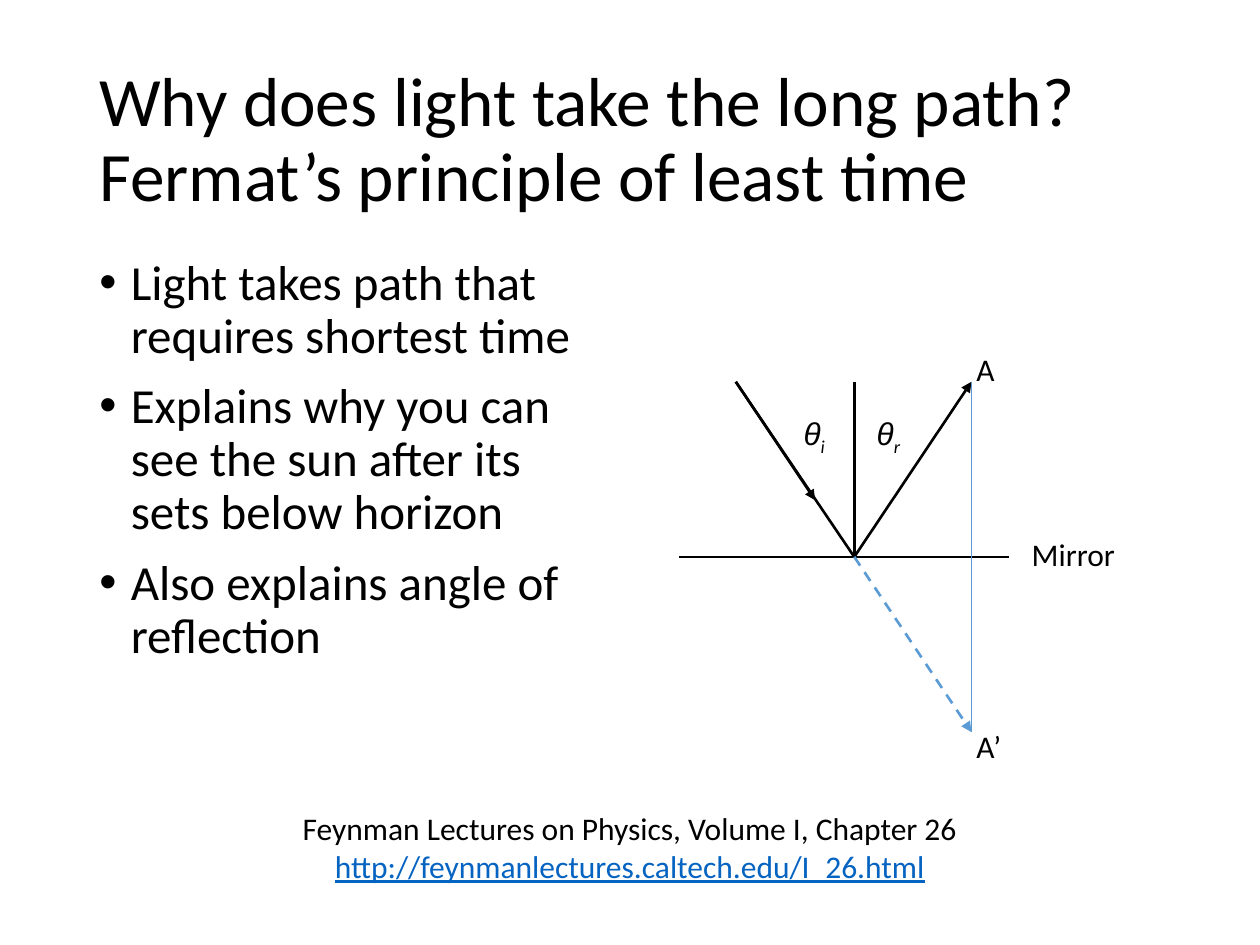
from dataclasses import dataclass
from typing import Optional

from lxml import etree
from pptx import Presentation
from pptx.dml.color import RGBColor
from pptx.enum.dml import MSO_LINE
from pptx.enum.shapes import MSO_CONNECTOR
from pptx.enum.text import MSO_ANCHOR, PP_ALIGN
from pptx.oxml.ns import qn
from pptx.util import Inches, Pt

STRAIGHT = MSO_CONNECTOR.STRAIGHT
DASH = MSO_LINE.DASH
MIDDLE = MSO_ANCHOR.MIDDLE
TOP = MSO_ANCHOR.TOP
CENTER = PP_ALIGN.CENTER

BLACK = RGBColor(0x00, 0x00, 0x00)
BLUE = RGBColor(0x5B, 0x9B, 0xD5)
LINK_BLUE = RGBColor(0x05, 0x63, 0xC1)

# Key points of the ray diagram, in inches
SOURCE = (5.84, 3.03)
MIDWAY = (6.47, 3.97)
HIT = (6.78, 4.42)
NORMAL_TOP = (6.78, 3.03)
POINT_A = (7.71, 3.03)
IMAGE_A = (7.71, 5.81)
MIRROR_LEFT = (5.39, 4.42)
MIRROR_RIGHT = (8.01, 4.42)


@dataclass
class Ray:
    start: tuple[float, float]
    end: tuple[float, float]
    color: RGBColor = BLACK
    width: float = 1.5
    arrow: bool = False
    dashed: bool = False


@dataclass
class Label:
    text: str
    left: float
    top: float
    width: float
    subscript: Optional[str] = None


RAYS = [
    Ray(SOURCE, MIDWAY, arrow=True),
    Ray(MIRROR_LEFT, MIRROR_RIGHT),
    Ray(HIT, NORMAL_TOP),
    Ray(HIT, POINT_A, arrow=True),
    Ray(SOURCE, HIT),
    Ray(HIT, IMAGE_A, BLUE, arrow=True, dashed=True),
    Ray(POINT_A, IMAGE_A, BLUE, width=0.5),
]

LABELS = [
    Label("θ", 6.28, 3.24, 0.37, subscript="i"),
    Label("θ", 6.86, 3.24, 0.39, subscript="r"),
    Label("Mirror", 8.09, 4.2, 0.87),
    Label("A", 7.65, 2.73, 0.35),
    Label("A’", 7.65, 5.72, 0.4),
]

POINTS = [
    "Light takes path that requires shortest time",
    "Explains why you can see the sun after its sets below horizon",
    "Also explains angle of reflection",
]


def set_font(font, size: float, color: RGBColor = BLACK, name: str = "Calibri") -> None:
    font.name = name
    font.size = Pt(size)
    font.color.rgb = color


def add_text_frame(slide, left: float, top: float, width: float, height: float,
                   wrap: bool = True, anchor=TOP):
    box = slide.shapes.add_textbox(Inches(left), Inches(top), Inches(width), Inches(height))
    frame = box.text_frame
    frame.word_wrap = wrap
    frame.vertical_anchor = anchor
    return frame


def add_bullet(paragraph) -> None:
    properties = paragraph._p.get_or_add_pPr()
    properties.set("marL", str(Inches(0.25)))
    properties.set("indent", str(-Inches(0.25)))
    etree.SubElement(properties, qn("a:buFont")).set("typeface", "Arial")
    etree.SubElement(properties, qn("a:buChar")).set("char", "•")


def add_ray(slide, ray: Ray) -> None:
    ends = [Inches(value) for value in (*ray.start, *ray.end)]
    connector = slide.shapes.add_connector(STRAIGHT, *ends)
    line = connector.line
    line.color.rgb = ray.color
    line.width = Pt(ray.width)
    if ray.dashed:
        line.dash_style = DASH
    if ray.arrow:
        etree.SubElement(line._get_or_add_ln(), qn("a:tailEnd")).set("type", "triangle")
    etree.SubElement(connector._element.spPr, qn("a:effectLst"))


def add_label(slide, label: Label) -> None:
    frame = add_text_frame(slide, label.left, label.top, label.width, 0.4, wrap=False)
    paragraph = frame.paragraphs[0]
    main = paragraph.add_run()
    main.text = label.text
    if label.subscript is None:
        set_font(paragraph.font, 18)
        return
    lower = paragraph.add_run()
    lower.text = label.subscript
    set_font(main.font, 18, name="Arial")
    set_font(lower.font, 18)
    paragraph.font.italic = main.font.italic = lower.font.italic = True
    lower._r.get_or_add_rPr().set("baseline", "-25000")


def main() -> None:
    prs = Presentation()
    prs.slide_width, prs.slide_height = Inches(10), Inches(7.5)
    slide = prs.slides.add_slide(prs.slide_layouts[6])

    # Title
    title = add_text_frame(slide, 0.69, 0.4, 8.62, 1.45, anchor=MIDDLE).paragraphs[0]
    title.text = "Why does light take the long path?\vFermat’s principle of least time"
    title.line_spacing = 0.9
    set_font(title.font, 39.6)

    # Bullet points
    body = add_text_frame(slide, 0.69, 2, 4.25, 4.76)
    for index, point in enumerate(POINTS):
        paragraph = body.add_paragraph() if index else body.paragraphs[0]
        paragraph.text = point
        add_bullet(paragraph)
        paragraph.line_spacing = 0.9
        if index:
            paragraph.space_before = Pt(10)
        set_font(paragraph.font, 28)

    # Reference
    reference = add_text_frame(slide, 2.27, 6.37, 5.46, 0.71, wrap=False)
    citation, address = reference.paragraphs[0], reference.add_paragraph()
    citation.text = "Feynman Lectures on Physics, Volume I, Chapter 26"
    address.text = "http://feynmanlectures.caltech.edu/I_26.html"
    for paragraph, color in ((citation, BLACK), (address, LINK_BLUE)):
        paragraph.alignment = CENTER
        set_font(paragraph.font, 18, color)
    address.font.underline = True

    # Reflection diagram
    for ray in RAYS:
        add_ray(slide, ray)
    for label in LABELS:
        add_label(slide, label)

    prs.save("out.pptx")


if __name__ == "__main__":
    main()
